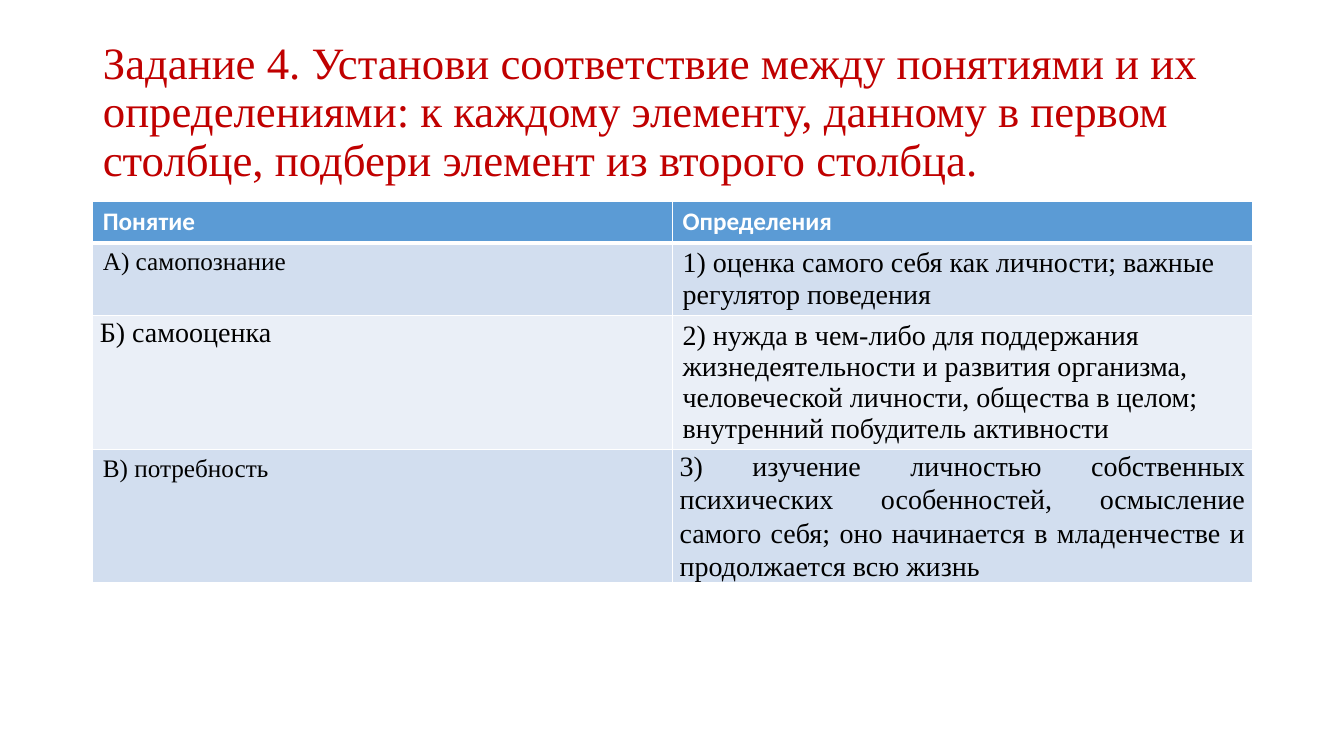
from dataclasses import dataclass

from lxml.etree import SubElement
from pptx import Presentation
from pptx.dml.color import RGBColor
from pptx.enum.text import MSO_ANCHOR, MSO_AUTO_SIZE, PP_ALIGN
from pptx.oxml.ns import qn
from pptx.util import Inches, Pt


@dataclass(frozen=True)
class Theme:
    title: str = "C00000"
    header: str = "5B9BD5"
    odd_row: str = "D2DEEF"
    even_row: str = "EAEFF7"
    light: str = "FFFFFF"
    dark: str = "000000"
    serif: str = "Times New Roman"
    sans: str = "Calibri"
    title_size: int = 32
    small_size: int = 18
    body_size: int = 20


THEME = Theme()
TITLE = (
    "Задание 4. Установи соответствие между понятиями и их определениями: "
    "к каждому элементу, данному в первом столбце, подбери элемент из второго столбца."
)
HEADER = {"name": THEME.sans, "size": Pt(THEME.small_size), "bold": True, "color": THEME.light}
BODY = {"name": THEME.serif, "size": Pt(THEME.body_size), "bold": False, "color": THEME.dark}
SMALL = {**BODY, "size": Pt(THEME.small_size)}
PLAIN = {}
JUSTIFIED = {"alignment": PP_ALIGN.JUSTIFY, "line_spacing": 1.07}
TIGHT = {
    "margin_left": Inches(0.07),
    "margin_right": Inches(0.07),
    "margin_top": 0,
    "margin_bottom": 0,
}
ROWS = [
    [("Понятие", HEADER, PLAIN, PLAIN), ("Определения", HEADER, PLAIN, PLAIN)],
    [
        ("А) самопознание", SMALL, PLAIN, PLAIN),
        ("1) оценка самого себя как личности; важные регулятор поведения", BODY, PLAIN, PLAIN),
    ],
    [
        ("Б) самооценка", BODY, JUSTIFIED, TIGHT),
        (
            "2) нужда в чем-либо для поддержания жизнедеятельности и развития организма, "
            "человеческой личности, общества в целом; внутренний побудитель активности",
            BODY, PLAIN, PLAIN,
        ),
    ],
    [
        ("В) потребность", SMALL, PLAIN, PLAIN),
        (
            "3) изучение личностью собственных психических особенностей, осмысление "
            "самого себя; оно начинается в младенчестве и продолжается всю жизнь",
            BODY, JUSTIFIED, TIGHT,
        ),
    ],
]


def apply_format(obj, values):
    for name, value in values.items():
        if name == "color":
            obj.color.rgb = RGBColor.from_string(value)
        else:
            setattr(obj, name, value)


def write_text(tf, text, font, paragraph):
    p = tf.paragraphs[0]
    apply_format(p, paragraph)
    r = p.add_run()
    r.text = text
    apply_format(r.font, font)


def add_title(s):
    sp = s.shapes.title
    apply_format(sp, {
        "left": Inches(0.92), "top": Inches(0.4),
        "width": Inches(11.5), "height": Inches(1.45),
    })
    tf = sp.text_frame
    apply_format(tf, {
        "word_wrap": True,
        "auto_size": MSO_AUTO_SIZE.NONE,
        "vertical_anchor": MSO_ANCHOR.MIDDLE,
    })
    font = {"name": THEME.serif, "size": Pt(THEME.title_size), "color": THEME.title}
    write_text(tf, TITLE, font, {"alignment": PP_ALIGN.LEFT, "line_spacing": 0.9})


def set_borders(cell, row):
    widths = {"L": 1, "R": 1, "T": 3 if row == 1 else 1, "B": 3 if row == 0 else 1}
    tc_pr = cell._tc.get_or_add_tcPr()
    for side, width in widths.items():
        ln = SubElement(tc_pr, qn(f"a:ln{side}"), w=str(Pt(width)))
        fill = SubElement(ln, qn("a:solidFill"))
        SubElement(fill, qn("a:srgbClr"), val=THEME.light)


def row_fill(row):
    if row == 0:
        return THEME.header
    return THEME.odd_row if row % 2 else THEME.even_row


def add_matching_table(s):
    frame = s.shapes.add_table(
        len(ROWS), len(ROWS[0]), Inches(0.92), Inches(2), Inches(11.5), Inches(4.01)
    )
    table = frame.table
    for i, row in enumerate(ROWS):
        table.rows[i].height = Inches(0.41)
        for j, (text, font, paragraph, margins) in enumerate(row):
            cell = table.cell(i, j)
            set_borders(cell, i)
            cell.fill.solid()
            cell.fill.fore_color.rgb = RGBColor.from_string(row_fill(i))
            apply_format(cell, margins)
            write_text(cell.text_frame, text, font, paragraph)
    frame.height = Inches(4.01)


def main():
    prs = Presentation()
    prs.slide_width, prs.slide_height = Inches(13.33), Inches(7.5)
    s = prs.slides.add_slide(prs.slide_layouts[5])
    add_title(s)
    add_matching_table(s)
    prs.save("out.pptx")


if __name__ == "__main__":
    main()
